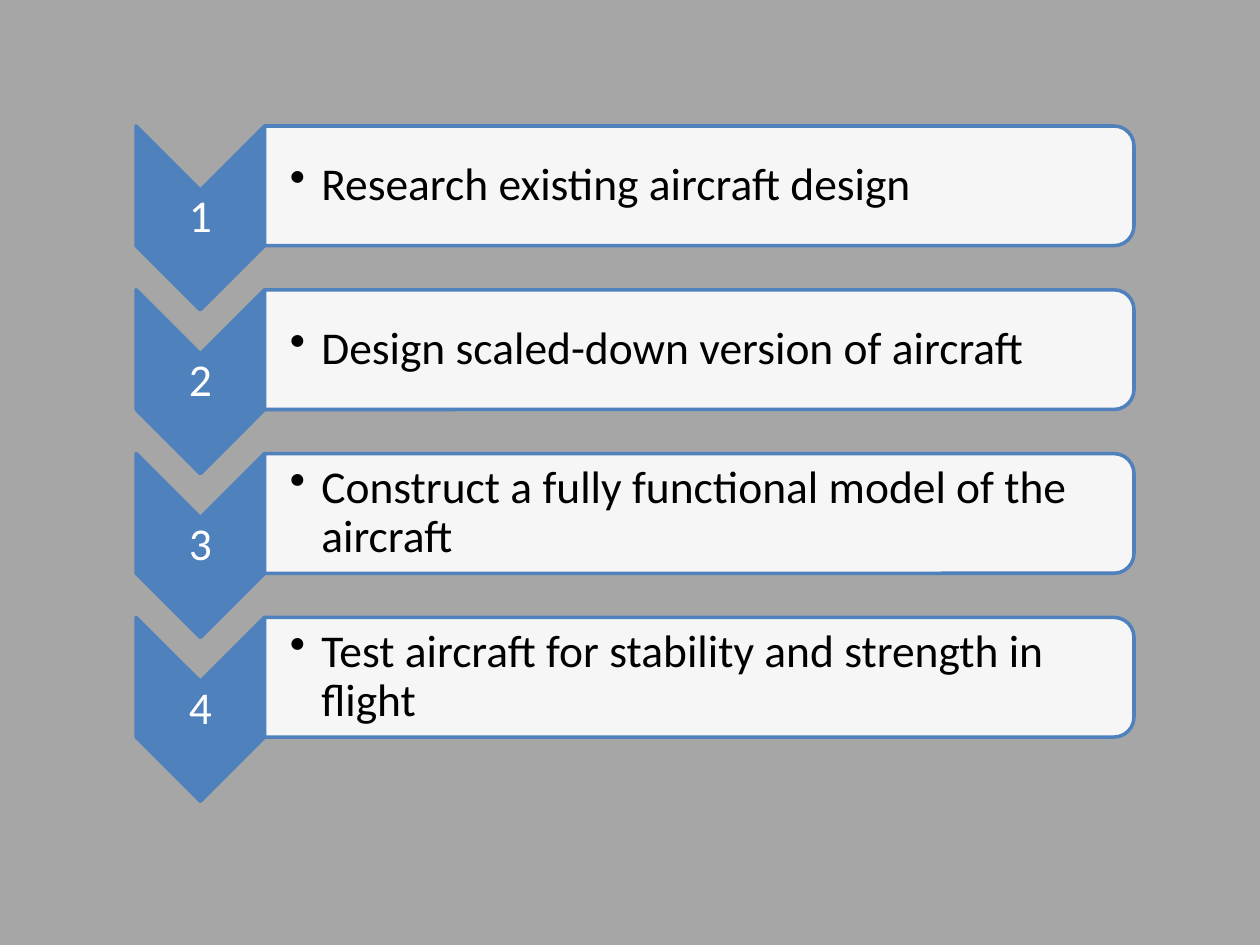
"""Build a slide of four numbered project steps, each a chevron beside a panel."""
import pptx
import pptx.dml.color
import pptx.enum.shapes
import pptx.enum.text
import pptx.oxml.ns
import pptx.util
from lxml import etree

STEPS = [
    "Research existing aircraft design",
    "Design scaled-down version of aircraft",
    "Construct a fully functional model of the aircraft",
    "Test aircraft for stability and strength in flight",
]

GRAY = pptx.dml.color.RGBColor(0xA6, 0xA6, 0xA6)
BLUE = pptx.dml.color.RGBColor(0x4F, 0x81, 0xBD)
WHITE = pptx.dml.color.RGBColor(0xFF, 0xFF, 0xFF)
BLACK = pptx.dml.color.RGBColor(0, 0, 0)

SLIDE_WIDTH, SLIDE_HEIGHT = 10, 7.5
TOP, ROW_PITCH = 1, 1.3
CHEVRON_LEFT, CHEVRON_WIDTH, CHEVRON_HEIGHT = 1.08, 1.02, 1.46
NUMBER_HEIGHT = 0.44
PANEL_LEFT = CHEVRON_LEFT + CHEVRON_WIDTH
PANEL_WIDTH, PANEL_HEIGHT = 6.9, 0.95
PANEL_TEXT_WIDTH, PANEL_TEXT_HEIGHT = 6.85, 0.86
INSET, PANEL_INSET, BULLET_INDENT = 0.02, 0.2, 0.25
PANEL_ALPHA = 90

Inches = pptx.util.Inches
ShapeType = pptx.enum.shapes.MSO_SHAPE
qn = pptx.oxml.ns.qn


def add_turned_shape(slide, kind, left, top, width, height, fill):
    """Add a shape turned by 90 degrees that covers the given upright box."""
    shape = slide.shapes.add_shape(
        kind,
        Inches(left + (width - height) / 2),
        Inches(top + (height - width) / 2),
        Inches(height),
        Inches(width),
    )
    shape.rotation = 90
    shape.shadow.inherit = False
    shape.fill.solid()
    shape.fill.fore_color.rgb = fill
    shape.line.color.rgb = BLUE
    shape.line.width = pptx.util.Pt(2)
    return shape


def add_label(slide, text, left, top, width, height, color, left_inset=INSET):
    """Add a vertically centred label and return its paragraph."""
    box = slide.shapes.add_textbox(*map(Inches, (left, top, width, height)))
    frame = box.text_frame
    frame.word_wrap = True
    frame.vertical_anchor = pptx.enum.text.MSO_ANCHOR.MIDDLE
    frame.margin_left = Inches(left_inset)
    frame.margin_top = frame.margin_right = frame.margin_bottom = Inches(INSET)
    paragraph = frame.paragraphs[0]
    paragraph.text = text
    paragraph.line_spacing = 0.9
    paragraph.font.name = "Calibri"
    paragraph.font.size = pptx.util.Pt(26)
    paragraph.font.color.rgb = color
    return paragraph


def add_bullet(paragraph):
    """Give a paragraph a round bullet with a hanging indent."""
    paragraph.level = 1
    properties = paragraph._p.get_or_add_pPr()
    properties.set("marL", str(Inches(BULLET_INDENT)))
    properties.set("indent", str(-Inches(BULLET_INDENT)))
    bullet = etree.Element(qn("a:buChar"), char="•")
    properties.find(qn("a:lnSpc")).addnext(bullet)


def add_step(slide, number, text, top):
    """Add one row: numbered chevron, panel and bulleted text."""
    add_turned_shape(slide, ShapeType.CHEVRON, CHEVRON_LEFT, top,
                     CHEVRON_WIDTH, CHEVRON_HEIGHT, BLUE)
    number_top = top + (CHEVRON_HEIGHT - NUMBER_HEIGHT) / 2
    label = add_label(slide, str(number), CHEVRON_LEFT, number_top,
                      CHEVRON_WIDTH, NUMBER_HEIGHT, WHITE)
    label.alignment = pptx.enum.text.PP_ALIGN.CENTER

    panel = add_turned_shape(slide, ShapeType.ROUND_2_SAME_RECTANGLE, PANEL_LEFT,
                             top, PANEL_WIDTH, PANEL_HEIGHT, WHITE)
    fill_color = panel.element.spPr.find(qn("a:solidFill")).find(qn("a:srgbClr"))
    etree.SubElement(fill_color, qn("a:alpha"), val=str(PANEL_ALPHA * 1000))
    text_top = top + (PANEL_HEIGHT - PANEL_TEXT_HEIGHT) / 2
    add_bullet(add_label(slide, text, PANEL_LEFT, text_top, PANEL_TEXT_WIDTH,
                         PANEL_TEXT_HEIGHT, BLACK, PANEL_INSET))


def main():
    """Build and save the presentation."""
    presentation = pptx.Presentation()
    presentation.slide_width = Inches(SLIDE_WIDTH)
    presentation.slide_height = Inches(SLIDE_HEIGHT)
    slide = presentation.slides.add_slide(presentation.slide_layouts[6])
    slide.background.fill.solid()
    slide.background.fill.fore_color.rgb = GRAY
    for row, text in enumerate(STEPS):
        add_step(slide, row + 1, text, TOP + row * ROW_PITCH)
    presentation.save("out.pptx")


if __name__ == "__main__":
    main()
